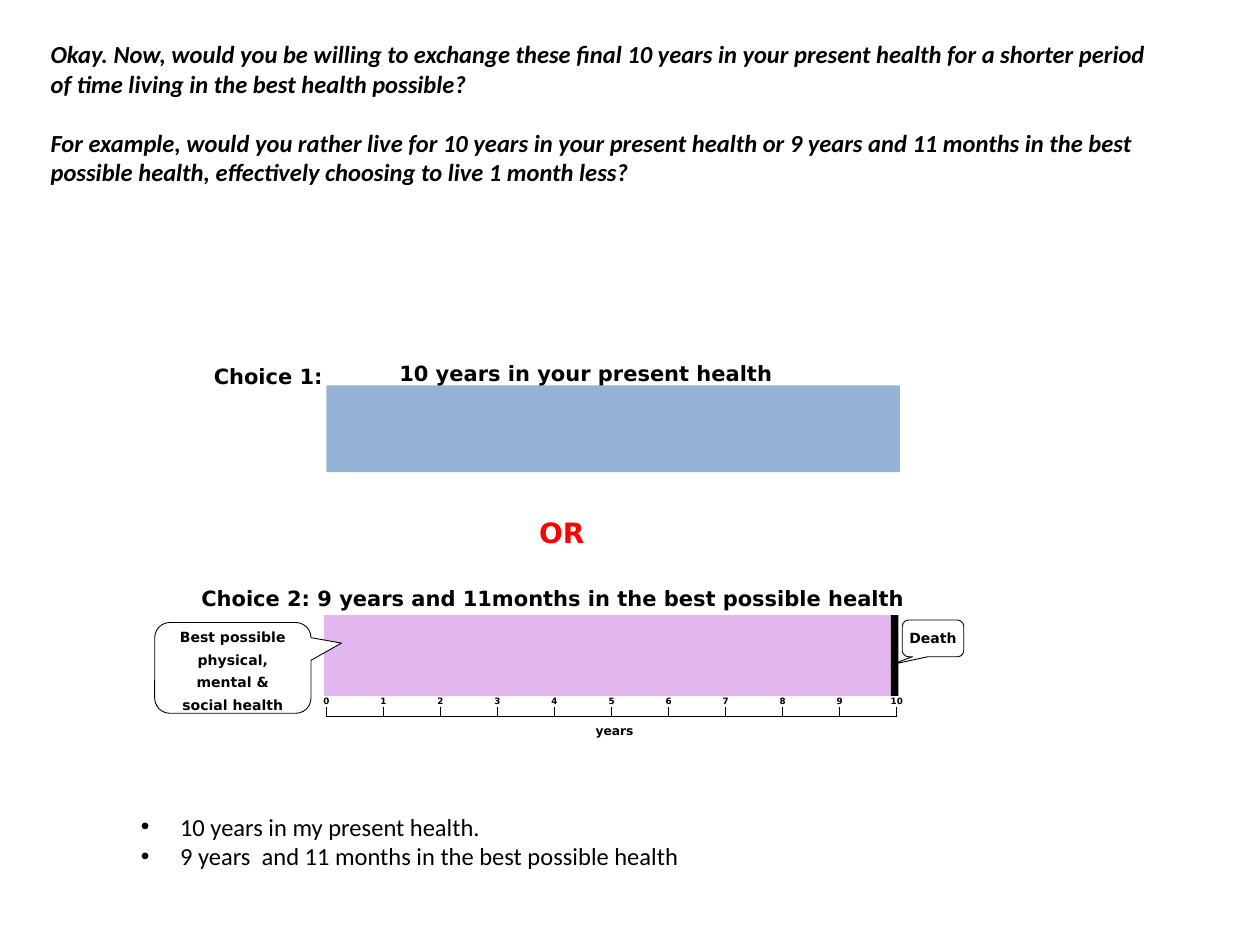
from lxml import etree
from pptx import Presentation, util as u
from pptx.dml.color import RGBColor
from pptx.enum import shapes, text
from pptx.oxml.ns import qn

# Content
INTRO = [
    "Okay. Now, would you be willing to exchange these final 10 years in your present health "
    "for a shorter period of time living in the best health possible?",
    "For example, would you rather live for 10 years in your present health or 9 years and "
    "11 months in the best possible health, effectively choosing to live 1 month less?",
]
ANSWERS = ["10 years in my present health.",
           "9 years  and 11 months in the best possible health"]
PADDED, TIGHT = (0.25, 0.13), (0, 0)
# Labels: words, (left, top, width, height) in cm, insets, size, colour
LABELS = [
    ("Choice 1:", (4.06, 7.19, 3.1, 0.76), PADDED, 12, "000000"),
    ("10 years in your present health", (7.8, 7.14, 8.46, 0.76), PADDED, 12, "000000"),
    ("OR", (10.62, 10.26, 2.16, 0.94), PADDED, 16, "FF0000"),
    ("Choice 2:", (3.81, 11.68, 2.87, 0.76), PADDED, 12, "000000"),
    ("9 years and 11months in the best possible health", (6.4, 11.81, 12.12, 0.51),
     TIGHT, 12, "000000"),
    ("years", (12.01, 14.58, 0.89, 0.3), TIGHT, 7, "000000"),
]
BARS = [
    ((6.58, 7.77, 11.56, 1.75), "95B3D7"),
    ((6.53, 12.4, 11.56, 1.63), "E2B7EF"),
    ((17.96, 12.4, 0.15, 1.63), "000000"),
]
# Callouts: words, box, pointer adjustments, insets, line spacing and space before in points
CALLOUTS = [
    ("Best possible physical, mental & social health", (3.12, 12.55, 3.15, 1.83),
     (0.695, -0.273, 0.167), (0.25, 0.2), 13, 4),
    ("Death", (18.19, 12.5, 1.24, 0.74), (-0.683, 0.715, 0.167), TIGHT, None, 0),
]
YEARS = 10
AXIS_LEFT, AXIS_RIGHT, AXIS_TOP, AXIS_Y = 6.58, 18.08, 14.25, 14.45


def colour(hex_value):
    return RGBColor.from_string(hex_value)


def cm(values):
    return [u.Cm(value) for value in values]


def move(shape, place):
    shape.left, shape.top, shape.width, shape.height = cm(place)


def set_frame(frame, inset=TIGHT, wrap=True, anchor=text.MSO_ANCHOR.TOP):
    frame.margin_left = frame.margin_right = u.Cm(inset[0])
    frame.margin_top = frame.margin_bottom = u.Cm(inset[1])
    frame.word_wrap = wrap
    frame.auto_size = text.MSO_AUTO_SIZE.NONE
    frame.vertical_anchor = anchor


def add_span(para, words, size, hex_value="000000", font="DejaVu Sans", bold=True, italic=False):
    span = para.add_run()
    span.text = words
    span.font.name, span.font.size = font, u.Pt(size)
    span.font.bold, span.font.italic = bold, italic
    span.font.color.rgb = colour(hex_value)


def add_label(page, words, place, inset, size, hex_value, align=text.PP_ALIGN.LEFT):
    box = page.shapes.add_textbox(*cm(place))
    set_frame(box.text_frame, inset, wrap=False)
    para = box.text_frame.paragraphs[0]
    para.alignment = align
    add_span(para, words, size, hex_value)


def add_solid(page, kind, place, hex_value):
    shape = page.shapes.add_shape(kind, *cm(place))
    shape.shadow.inherit = False
    shape.fill.solid()
    shape.fill.fore_color.rgb = colour(hex_value)
    shape.line.fill.background()
    return shape


def add_line(page, x1, y1, x2, y2):
    line = page.shapes.add_connector(shapes.MSO_CONNECTOR.STRAIGHT, *cm((x1, y1, x2, y2)))
    line.line.color.rgb = colour("000000")
    line.line.width = u.Pt(0.75)
    etree.SubElement(line._element.spPr, qn("a:effectLst"))


def fill_paragraphs(frame, lines, gap, **style):
    for index, words in enumerate(lines):
        para = frame.paragraphs[0] if index == 0 else frame.add_paragraph()
        para.alignment = text.PP_ALIGN.LEFT
        para.space_before = u.Pt(gap if index else 0)
        add_span(para, words, 14, font="Calibri", **style)


def main():
    deck = Presentation()
    deck.slide_width, deck.slide_height = u.Cm(25.4), u.Cm(19.05)
    page = deck.slides.add_slide(deck.slide_layouts[1])

    # Question and answers
    title, body = page.shapes.title, page.placeholders[1]
    move(title, (1.02, 0.79, 22.33, 3.58))
    set_frame(title.text_frame)
    fill_paragraphs(title.text_frame, INTRO, 17, italic=True)
    move(body, (2.84, 16.36, 11.56, 1.2))
    set_frame(body.text_frame)
    fill_paragraphs(body.text_frame, ANSWERS, 0, bold=False)
    for para in body.text_frame.paragraphs:
        properties = para._p.get_or_add_pPr()
        properties.set("marL", str(u.Cm(0.79)))
        properties.set("indent", str(-u.Cm(0.79)))

    # Bars and labels
    for place, hex_value in BARS:
        add_solid(page, shapes.MSO_SHAPE.RECTANGLE, place, hex_value)
    for label in LABELS:
        add_label(page, *label)

    # Time axis
    step = (AXIS_RIGHT - AXIS_LEFT) / YEARS
    add_line(page, AXIS_LEFT, AXIS_Y, AXIS_RIGHT, AXIS_Y)
    for year in range(YEARS + 1):
        x = AXIS_LEFT + year * step
        add_line(page, x, AXIS_TOP, x, AXIS_Y)
        add_label(page, str(year), (x - 0.25, 14.03, 0.5, 0.2), TIGHT, 5, "000000",
                  text.PP_ALIGN.CENTER)

    # Callouts
    for words, place, pointer, inset, spacing, before in CALLOUTS:
        callout = add_solid(page, shapes.MSO_SHAPE.ROUNDED_RECTANGULAR_CALLOUT, place, "FFFFFF")
        callout.line.color.rgb = colour("000000")
        callout.line.width = u.Pt(0.5)
        for index, value in enumerate(pointer):
            callout.adjustments[index] = value
        set_frame(callout.text_frame, inset, anchor=text.MSO_ANCHOR.MIDDLE)
        para = callout.text_frame.paragraphs[0]
        para.alignment = text.PP_ALIGN.CENTER
        para.line_spacing = u.Pt(spacing) if spacing else None
        para.space_before = u.Pt(before)
        add_span(para, words, 8)

    deck.save("out.pptx")


if __name__ == "__main__":
    main()
